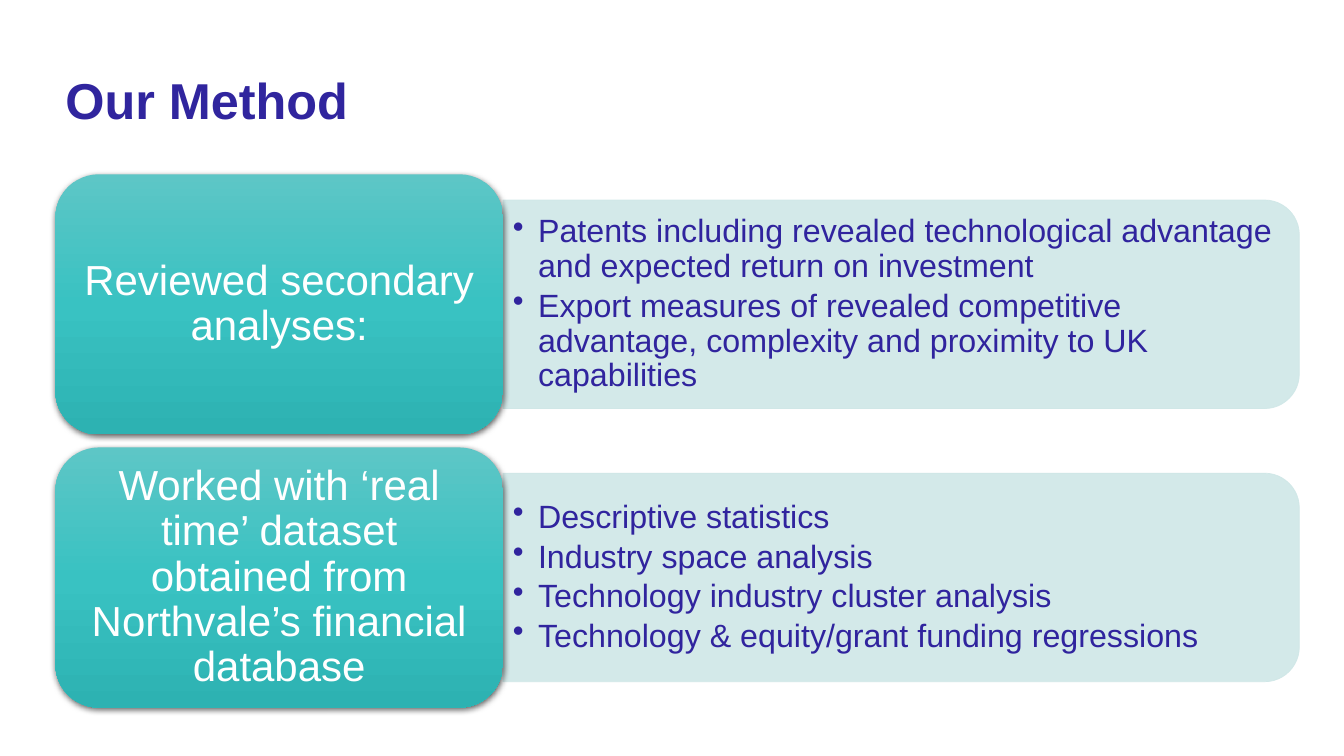
"""Build the method slide: two rounded labels, each with a panel of bullet points."""
from lxml import etree
from pptx import Presentation
from pptx import util as u
from pptx.dml.color import RGBColor
from pptx.enum import shapes, text
from pptx.oxml import parse_xml
from pptx.oxml.ns import nsdecls, qn

TITLE = "Our Method"
STEPS = [
    ("Reviewed secondary analyses:",
     ["Patents including revealed technological advantage and expected return on investment",
      "Export measures of revealed competitive advantage, complexity and proximity to UK capabilities"]),
    ("Worked with ‘real time’ dataset obtained from Northvale’s financial database",
     ["Descriptive statistics",
      "Industry space analysis",
      "Technology industry cluster analysis",
      "Technology & equity/grant funding regressions"]),
]
GRADIENT = [(0, "5DC6C6"), (50, "39C2C2"), (100, "2DB2B2")]
PANEL_COLOUR, INDIGO, WHITE = "CFE7E7", "30249E", "FFFFFF"

LEFT, TOP, PITCH = 39.6, 124.5, 195.1
LABEL_WIDTH, LABEL_HEIGHT, LABEL_INSET = 319.7, 185.8, 9
PANEL_WIDTH, PANEL_HEIGHT = 568.8, 149
LIST_WIDTH, LIST_HEIGHT = 561.6, 134


def colour(value):
    return RGBColor.from_string(value)


def box(left, top, width, height):
    return [u.Pt(length) for length in (left, top, width, height)]


def add_text(slide, place, lines, size, ink, bold=False, centred=False,
             bullets=False, after=0, insets=(7.2, 3.6)):
    shape = slide.shapes.add_textbox(*box(*place))
    frame = shape.text_frame
    frame.word_wrap = True
    frame.vertical_anchor = text.MSO_ANCHOR.MIDDLE
    frame.margin_left = frame.margin_right = u.Pt(insets[0])
    frame.margin_top = frame.margin_bottom = u.Pt(insets[1])
    for index, line in enumerate(lines):
        paragraph = frame.paragraphs[0] if index == 0 else frame.add_paragraph()
        paragraph.line_spacing = 0.9
        paragraph.space_after = u.Pt(after)
        paragraph.alignment = text.PP_ALIGN.CENTER if centred else text.PP_ALIGN.LEFT
        if bullets:
            properties = paragraph._p.get_or_add_pPr()
            properties.set("marL", str(u.Pt(18)))
            properties.set("indent", str(-u.Pt(18)))
            etree.SubElement(properties, qn("a:buChar"), char="•")
        run = paragraph.add_run()
        run.text = line
        run.font.name = "Arial"
        run.font.size = u.Pt(size)
        run.font.bold = bold
        run.font.color.rgb = colour(ink)


def add_panel(slide, left, top):
    middle_x, middle_y = left + PANEL_WIDTH / 2, top + PANEL_HEIGHT / 2
    place = (middle_x - PANEL_HEIGHT / 2, middle_y - PANEL_WIDTH / 2, PANEL_HEIGHT, PANEL_WIDTH)
    shape = slide.shapes.add_shape(shapes.MSO_SHAPE.ROUND_2_SAME_RECTANGLE, *box(*place))
    shape.rotation = 90
    shape.shadow.inherit = False
    shape.fill.solid()
    shape.fill.fore_color.rgb = colour(PANEL_COLOUR)
    shape.line.color.rgb = colour(PANEL_COLOUR)
    shape.line.width = u.Pt(0.5)
    for tint in shape._element.spPr.iter(qn("a:srgbClr")):
        etree.SubElement(tint, qn("a:alpha"), val="90000")


def add_label(slide, left, top):
    place = box(left, top, LABEL_WIDTH, LABEL_HEIGHT)
    shape = slide.shapes.add_shape(shapes.MSO_SHAPE.ROUNDED_RECTANGLE, *place)
    shape.line.fill.background()
    stops = "".join(f'<a:gs pos="{position * 1000}"><a:srgbClr val="{value}"/></a:gs>'
                    for position, value in GRADIENT)
    gradient = parse_xml(f'<a:gradFill {nsdecls("a")} rotWithShape="1"><a:gsLst>{stops}</a:gsLst>'
                         '<a:lin ang="5400000" scaled="0"/></a:gradFill>')
    shadow = parse_xml(f'<a:effectLst {nsdecls("a")}><a:outerShdw blurRad="{u.Pt(4.5)}" '
                       f'dist="{u.Pt(1.5)}" dir="5400000" rotWithShape="0">'
                       '<a:srgbClr val="000000"><a:alpha val="63000"/></a:srgbClr>'
                       '</a:outerShdw></a:effectLst>')
    properties = shape._element.spPr
    properties.find(qn("a:prstGeom")).addnext(gradient)
    properties.append(shadow)


def main():
    presentation = Presentation()
    presentation.slide_width, presentation.slide_height = u.Pt(960), u.Pt(540)
    slide = presentation.slides.add_slide(presentation.slide_layouts[6])
    add_text(slide, (LEFT, 37.4, 889.2, 72.7), [TITLE], 36, "30259E", bold=True)
    panel_left = LEFT + LABEL_WIDTH
    for index, (label, points) in enumerate(STEPS):
        top = TOP + index * PITCH
        add_panel(slide, panel_left, top + (LABEL_HEIGHT - PANEL_HEIGHT) / 2)
        add_text(slide, (panel_left, top + (LABEL_HEIGHT - LIST_HEIGHT) / 2, LIST_WIDTH, LIST_HEIGHT),
                 points, 23, INDIGO, bullets=True, after=3.45)
        add_label(slide, LEFT, top)
        add_text(slide, (LEFT + LABEL_INSET, top + LABEL_INSET,
                         LABEL_WIDTH - 2 * LABEL_INSET, LABEL_HEIGHT - 2 * LABEL_INSET),
                 [label], 30, WHITE, centred=True, insets=(9, 4.5))
    presentation.save("out.pptx")


if __name__ == "__main__":
    main()
